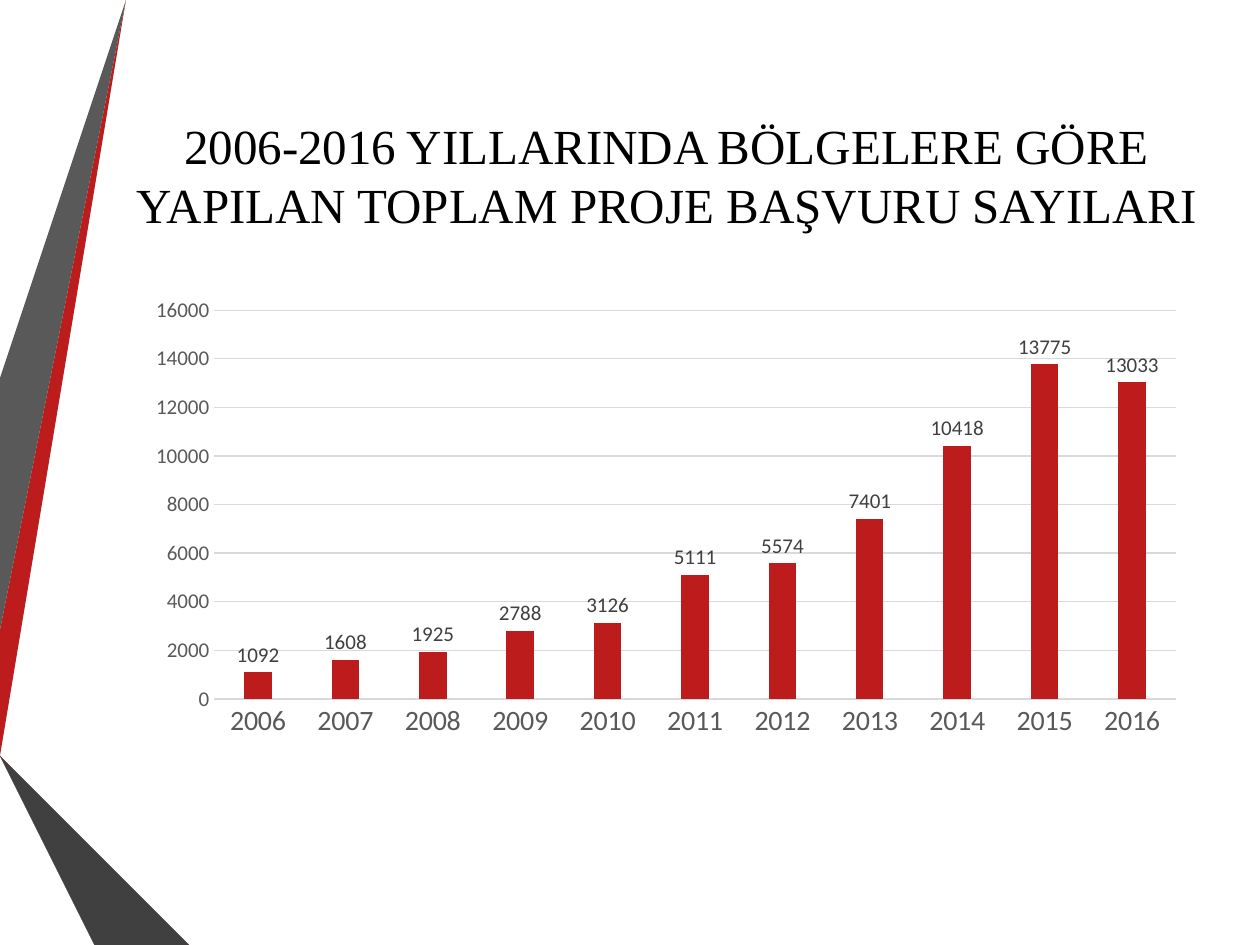
from pptx import Presentation
from pptx.chart.data import CategoryChartData
from pptx.dml.color import RGBColor
from pptx.enum.chart import XL_CHART_TYPE as CT, XL_LABEL_POSITION as LP, XL_TICK_MARK as TM
from pptx.enum.text import MSO_ANCHOR, PP_ALIGN
from pptx.util import Inches, Pt

W, H = 10, 7.5
RED, GRID, GREY = "BC1C1C", "D9D9D9", "595959"


def rgb(value):
    return RGBColor.from_string(value)


def style_font(font, size, color, name="Calibri"):
    font.size, font.name, font.bold = Pt(size), name, False
    font.color.rgb = rgb(color)


prs = Presentation()
prs.slide_width, prs.slide_height = Inches(W), Inches(H)
s = prs.slides.add_slide(prs.slide_layouts[6])

# Ribbons folding along the left edge, back to front
ribbons = [
    (RED, [(0, 5.44), (0, 5.75), (0.22, 5.79), (1.17, 0), (0.89, 0)]),
    (GREY, [(0.83, 0), (0.55, 0), (0, 3.36), (0, 5.06)]),
    ("262626", [(0, 6.19), (0, 6.21), (0.93, H), (0.99, H)]),
    ("5E0E0E", [(0, 5.79), (0, 5.8), (1.56, H), (1.63, H)]),
    ("8D1515", [(0, 5.79), (1.63, H), (2.33, H), (0.22, 5.79), (0, 5.75)]),
    ("404040", [(0, 6.19), (0.99, H), (1.51, H), (0, 5.86)]),
]
for color, points in ribbons:
    builder = s.shapes.build_freeform(*points[0], scale=Inches(1))
    builder.add_line_segments(points[1:], close=True)
    sp = builder.convert_to_shape()
    sp.shadow.inherit = False
    sp.fill.solid()
    sp.fill.fore_color.rgb = rgb(color)
    sp.line.fill.background()

# Title
tf = s.shapes.add_textbox(Inches(0.79), Inches(0.76), Inches(9), Inches(1.25)).text_frame
tf.word_wrap = True
tf.vertical_anchor = MSO_ANCHOR.MIDDLE
p = tf.paragraphs[0]
p.text = "2006-2016 YILLARINDA BÖLGELERE GÖRE YAPILAN TOPLAM PROJE BAŞVURU SAYILARI"
p.alignment = PP_ALIGN.CENTER
style_font(p.font, 28, "000000", "Times New Roman")

# Applications per year
data = CategoryChartData()
data.categories = [str(year) for year in range(2006, 2017)]
data.add_series("Series 1", [1092, 1608, 1925, 2788, 3126, 5111, 5574, 7401, 10418, 13775, 13033])
chart = s.shapes.add_chart(CT.COLUMN_CLUSTERED, Inches(1.07), Inches(2.29),
                           Inches(8.43), Inches(3.64), data).chart
chart.has_legend = chart.has_title = False
style_font(chart.font, 10, "000000")

# Columns and their labels
plot = chart.plots[0]
plot.gap_width, plot.overlap, plot.vary_by_categories = 219, -27, False
fill = plot.series[0].format.fill
fill.solid()
fill.fore_color.rgb = rgb(RED)
labels = plot.series[0].data_labels
labels.show_value, labels.position = True, LP.OUTSIDE_END
style_font(labels.font, 12, "404040")

# Axes
years, counts = chart.category_axis, chart.value_axis
for axis, size in ((years, 16), (counts, 12)):
    axis.major_tick_mark = axis.minor_tick_mark = TM.NONE
    style_font(axis.tick_labels.font, size, GREY)
counts.minimum_scale, counts.maximum_scale, counts.major_unit = 0, 16000, 2000
counts.format.line.fill.background()
for line in (years.format.line, counts.major_gridlines.format.line):
    line.color.rgb = rgb(GRID)
    line.width = Pt(0.75)

prs.save("out.pptx")
